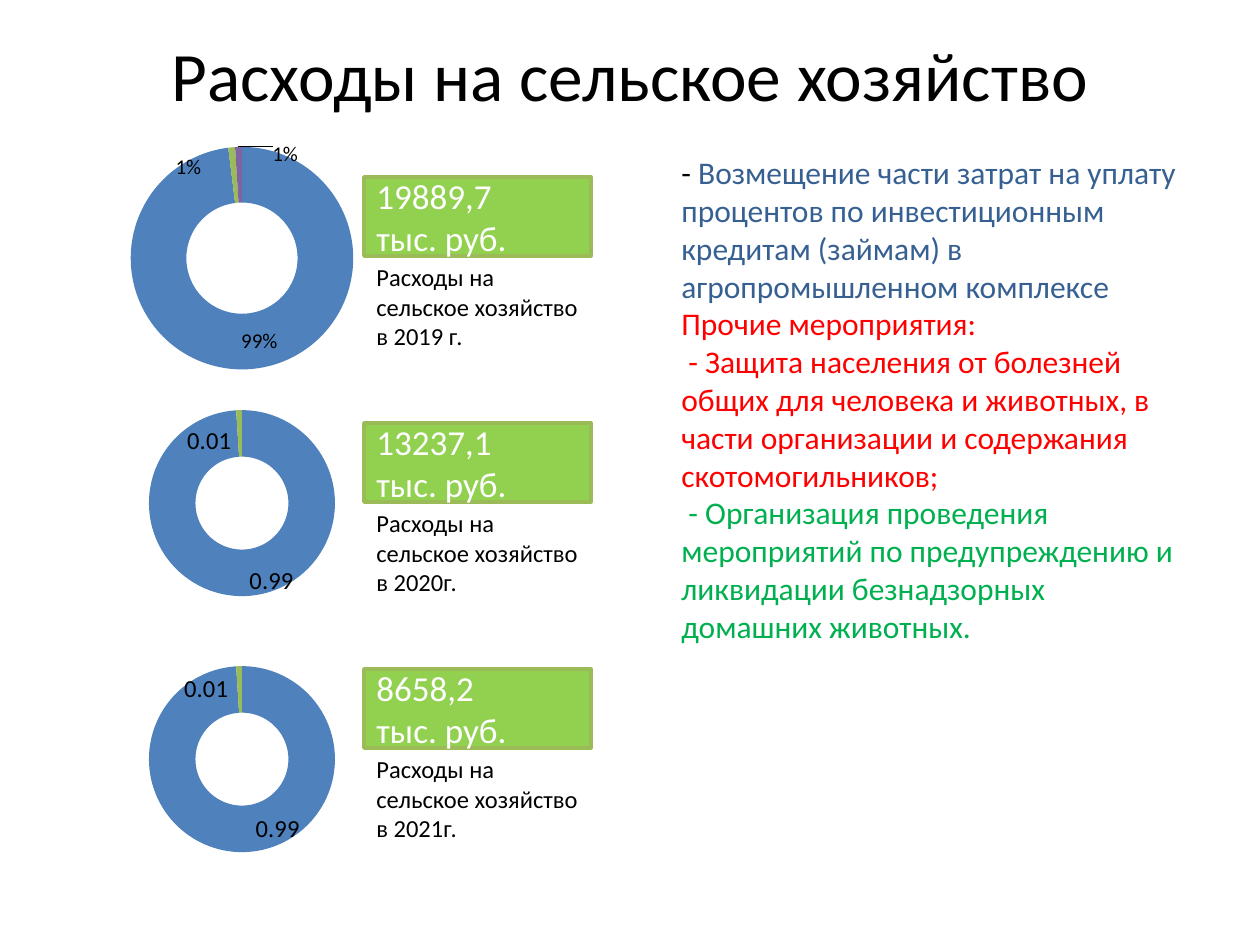
import copy
import pptx
import pptx.chart.data
import pptx.dml.color
import pptx.enum.chart
import pptx.enum.shapes
import pptx.enum.text
import pptx.oxml
import pptx.oxml.ns
import pptx.util

RGBColor = pptx.dml.color.RGBColor
BLACK = RGBColor(0x00, 0x00, 0x00)
WHITE = RGBColor(0xFF, 0xFF, 0xFF)
LIME = RGBColor(0x92, 0xD0, 0x50)
OLIVE = RGBColor(0x9B, 0xBB, 0x59)
NAVY = RGBColor(0x37, 0x60, 0x92)
RED = RGBColor(0xFF, 0x00, 0x00)
GREEN = RGBColor(0x00, 0xB0, 0x50)
SLICES = [RGBColor(0x4F, 0x81, 0xBD), RGBColor(0xC0, 0x50, 0x4D), OLIVE, RGBColor(0x80, 0x64, 0xA2)]
LEFT = pptx.enum.text.PP_ALIGN.LEFT
CENTER = pptx.enum.text.PP_ALIGN.CENTER
MIDDLE = pptx.enum.text.MSO_ANCHOR.MIDDLE
PX = 914400 / 126
CHART_NS = pptx.oxml.ns.nsdecls("c")
CHART_WIDTH, CHART_HEIGHT = 305, 256


def px(*lengths):
    return [pptx.util.Emu(round(length * PX)) for length in lengths]


def write(frame, paragraphs, size=18, color=BLACK, align=LEFT, anchor=None):
    frame.word_wrap = True
    if anchor is not None:
        frame.vertical_anchor = anchor
    for index, spans in enumerate(paragraphs):
        para = frame.add_paragraph() if index else frame.paragraphs[0]
        para.alignment = align
        for text, span_color in [(spans, color)] if isinstance(spans, str) else spans:
            span = para.add_run()
            span.text = text
            span.font.name = "Calibri"
            span.font.size = pptx.util.Pt(size)
            span.font.color.rgb = span_color


deck = pptx.Presentation()
deck.slide_width, deck.slide_height = px(1260, 945)
page = deck.slides.add_slide(deck.slide_layouts[6])

title = page.shapes.add_textbox(*px(63, 38, 1134, 71))
write(title.text_frame, ["Расходы на сельское хозяйство"], size=39.6, align=CENTER, anchor=MIDDLE)

years = [
    dict(amount="19889,7", year="2019 г.", chart_top=129, box_top=177, ring=222,
         values=[0.99, 0, 0.01, 0.01], size=12, number_format="0%",
         offsets={0: (0.04, 0), 1: None, 2: (-0.15, -0.03), 3: (0.15, -0.08)}),
    dict(amount="13237,1", year="2020г.", chart_top=374, box_top=423, ring=186,
         values=[0.99, None, 0.01], size=14, number_format="General",
         offsets={0: (0.09, 0.03), 2: (-0.1, 0.03)}),
    dict(amount="8658,2", year="2021г.", chart_top=630, box_top=669, ring=186,
         values=[0.99, None, 0.01], size=14, number_format="General",
         offsets={0: (0.11, 0), 2: (-0.11, 0)}),
]

for year in years:
    data = pptx.chart.data.CategoryChartData()
    data.categories = [str(number + 1) for number in range(len(year["values"]))]
    data.add_series("Series 1", year["values"])
    chart = page.shapes.add_chart(
        pptx.enum.chart.XL_CHART_TYPE.DOUGHNUT,
        *px(88, year["chart_top"], CHART_WIDTH, CHART_HEIGHT), data).chart
    chart.has_legend = False
    chart.has_title = False
    chart.font.name = "Calibri"
    chart.font.size = pptx.util.Pt(18)
    chart.font.color.rgb = BLACK
    plot = chart.plots[0]
    plot.vary_by_categories = True
    series = plot.series[0]
    for index in range(len(year["values"])):
        fill = series.points[index].format.fill
        fill.solid()
        fill.fore_color.rgb = SLICES[index]

    width, height = year["ring"] / CHART_WIDTH, year["ring"] / CHART_HEIGHT
    plot_area = chart._chartSpace.chart.plotArea
    for layout in plot_area.findall(pptx.oxml.ns.qn("c:layout")):
        plot_area.remove(layout)
    plot_area.insert(0, pptx.oxml.parse_xml(
        f'<c:layout {CHART_NS}><c:manualLayout><c:layoutTarget val="inner"/>'
        f'<c:xMode val="edge"/><c:yMode val="edge"/>'
        f'<c:x val="{(1 - width) / 2:.2f}"/><c:y val="{(1 - height) / 2:.2f}"/>'
        f'<c:w val="{width:.2f}"/><c:h val="{height:.2f}"/></c:manualLayout></c:layout>'))

    labels = series.data_labels
    labels.show_value = True
    labels.number_format = year["number_format"]
    labels.number_format_is_linked = False
    labels.font.name = "Calibri"
    labels.font.size = pptx.util.Pt(year["size"])
    labels.font.color.rgb = BLACK
    settings = [item for item in labels._element if not item.tag.endswith("LeaderLines")]
    for position, (index, offset) in enumerate(year["offsets"].items()):
        if offset is None:
            content = '<c:delete val="1"/>'
        else:
            content = (f'<c:layout><c:manualLayout><c:x val="{offset[0]}"/>'
                       f'<c:y val="{offset[1]}"/></c:manualLayout></c:layout>')
        label = pptx.oxml.parse_xml(f'<c:dLbl {CHART_NS}><c:idx val="{index}"/>{content}</c:dLbl>')
        if offset is not None:
            label.extend(copy.deepcopy(settings))
        labels._element.insert(position, label)

    box = page.shapes.add_shape(
        pptx.enum.shapes.MSO_SHAPE.RECTANGLE, *px(364, year["box_top"], 227, 79))
    box.shadow.inherit = False
    box.fill.solid()
    box.fill.fore_color.rgb = LIME
    box.line.color.rgb = OLIVE
    box.line.width = pptx.util.Pt(2)
    write(box.text_frame, [year["amount"], "тыс. руб."], size=20, color=WHITE, anchor=MIDDLE)

    caption = page.shapes.add_textbox(*px(364, year["box_top"] + 79, 227, 102))
    write(caption.text_frame, [f"Расходы на сельское хозяйство в {year['year']}"], size=14)

measures = page.shapes.add_textbox(*px(669, 147, 522, 624))
write(measures.text_frame, [
    [("- ", BLACK), ("Возмещение части затрат на уплату процентов по инвестиционным "
                     "кредитам (займам) в агропромышленном комплексе", NAVY)],
    [("Прочие мероприятия:", RED)],
    [(" - Защита населения от болезней общих для человека и животных, в части "
      "организации и содержания скотомогильников;", RED)],
    [(" - Организация проведения мероприятий по предупреждению и ликвидации "
      "безнадзорных домашних животных.", GREEN)],
])

deck.save("out.pptx")
